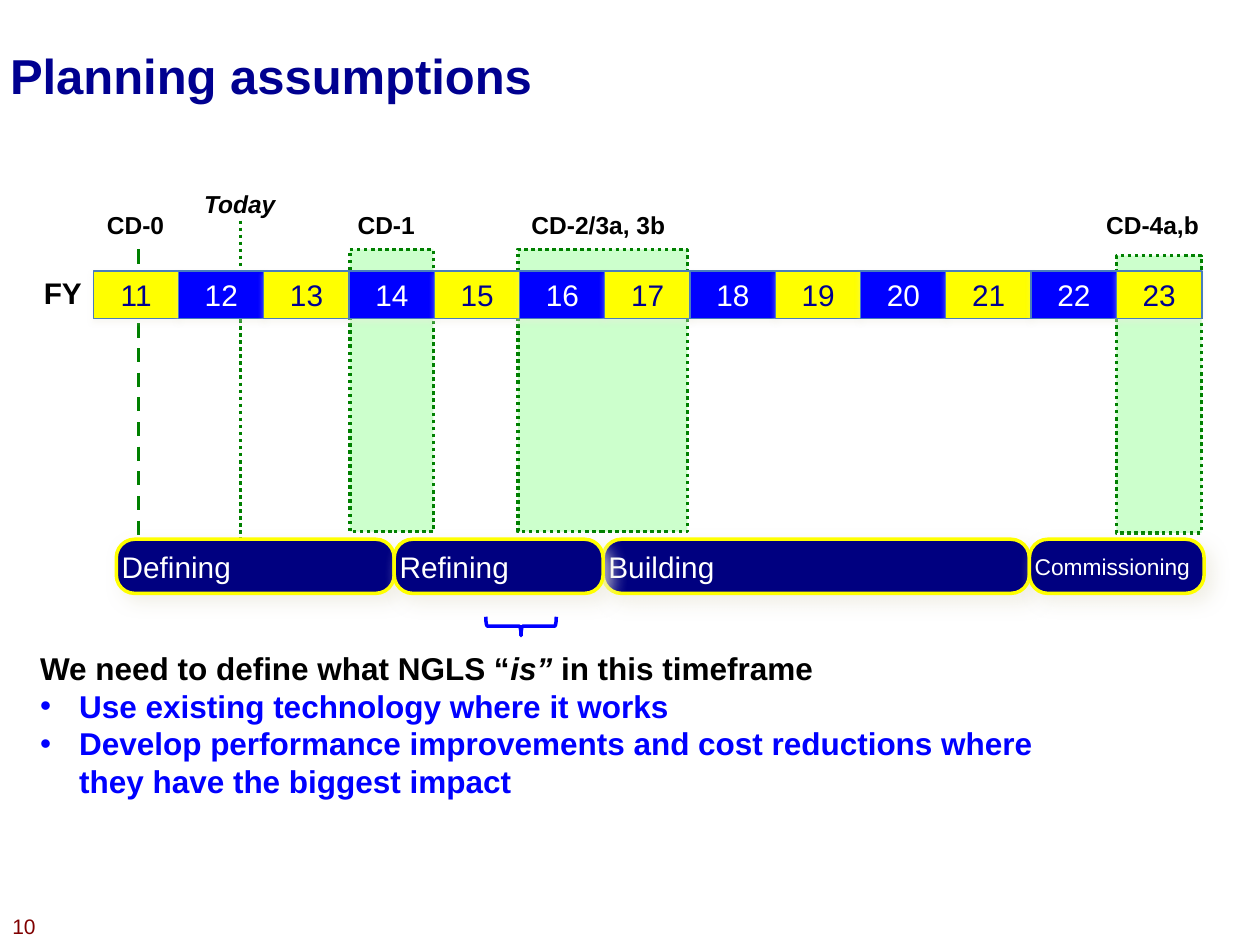
import pptx
import pptx.dml.color
import pptx.enum.dml
import pptx.enum.shapes
import pptx.enum.text
import pptx.oxml.ns
import pptx.util
from dataclasses import dataclass
from lxml import etree
from typing import Optional

Inches = pptx.util.Inches
Shape = pptx.enum.shapes.MSO_SHAPE
Dash = pptx.enum.dml.MSO_LINE
Anchor = pptx.enum.text.MSO_ANCHOR
Align = pptx.enum.text.PP_ALIGN
qn = pptx.oxml.ns.qn


@dataclass(frozen=True)
class Theme:
    font: str = "Arial"
    title: str = "000090"
    black: str = "000000"
    white: str = "FFFFFF"
    yellow: str = "FFFF00"
    blue: str = "0000FF"
    navy: str = "000080"
    green: str = "008000"
    pale_green: str = "CCFFCC"
    cell_line: str = "4A7DBB"
    shadow: str = "EEECE1"
    page: str = "800000"
    title_size: int = 28
    body_size: int = 18
    cell_size: int = 17
    label_size: int = 14
    small_size: int = 13
    page_size: int = 12


THEME = Theme()


@dataclass(frozen=True)
class Grid:
    left: float = 0.74
    last: float = 8.86
    first_year: int = 11
    last_year: int = 23

    @property
    def column(self) -> float:
        return (self.last - self.left) / (self.last_year - self.first_year)

    def x(self, columns: float) -> float:
        return self.left + columns * self.column


@dataclass(frozen=True)
class Shadow:
    opacity: int
    blur: float
    distance: float
    angle: int


@dataclass(frozen=True)
class Band:
    start: float
    end: float
    top: float
    height: float


@dataclass(frozen=True)
class Marker:
    column: float
    top: float
    bottom: float
    dash: Dash


@dataclass(frozen=True)
class Label:
    text: str
    column: float
    top: float
    width: float
    size: int = THEME.label_size
    italic: bool = False


@dataclass(frozen=True)
class Phase:
    text: str
    start: float
    end: float
    size: int = THEME.cell_size


GRID = Grid()
CELL_SHADOW = Shadow(35, 3, 1.8, 90)
PHASE_SHADOW = Shadow(75, 10, 6, 45)
BANDS = [Band(12, 13, 2.03, 2.2), Band(4.98, 6.97, 1.98, 2.24), Band(3.01, 3.99, 1.98, 2.24)]
MARKERS = [Marker(0.53, 1.98, 4.55, Dash.DASH), Marker(1.73, 1.75, 4.45, Dash.ROUND_DOT)]
LABELS = [
    Label("CD-0", 0.16, 1.67, 0.48),
    Label("Today", 1.3, 1.5, 0.6, italic=True),
    Label("CD-1", 3.1, 1.67, 0.48),
    Label("CD-2/3a, 3b", 5.14, 1.67, 1.11),
    Label("CD-4a,b", 11.88, 1.67, 0.77),
    Label("FY", -0.58, 2.18, 0.31, THEME.cell_size),
]
PHASES = [
    Phase("Defining", 0.27, 3.53),
    Phase("Building", 5.98, 10.98),
    Phase("Commissioning", 10.98, 13.03, THEME.small_size),
    Phase("Refining", 3.53, 5.98),
]


def rgb(color: str):
    return pptx.dml.color.RGBColor.from_string(color)


def format_run(run, size: int, color: str, bold: bool = False, italic: bool = False) -> None:
    font = run.font
    font.name, font.size = THEME.font, pptx.util.Pt(size)
    font.bold, font.italic = bold, italic
    font.color.rgb = rgb(color)


def set_margins(frame, horizontal: float, vertical: float) -> None:
    frame.margin_left = frame.margin_right = Inches(horizontal)
    frame.margin_top = frame.margin_bottom = Inches(vertical)


def set_line(line, color: str, width: float, dash: Optional[Dash] = None) -> None:
    line.color.rgb = rgb(color)
    line.width = pptx.util.Pt(width)
    if dash is not None:
        line.dash_style = dash


def add_shape(slide, kind, left: float, top: float, width: float, height: float,
              fill: Optional[str], line: str, line_width: float = 2,
              dash: Optional[Dash] = None, shadow: Optional[Shadow] = None):
    shape = slide.shapes.add_shape(kind, Inches(left), Inches(top), Inches(width), Inches(height))
    if fill:
        shape.fill.solid()
        shape.fill.fore_color.rgb = rgb(fill)
    else:
        shape.fill.background()
    set_line(shape.line, line, line_width, dash)
    shape.shadow.inherit = False
    if shadow:
        effects = shape._element.spPr.find(qn("a:effectLst"))
        outer = etree.SubElement(effects, qn("a:outerShdw"), blurRad=str(int(shadow.blur * 12700)),
                                 dist=str(int(shadow.distance * 12700)),
                                 dir=str(shadow.angle * 60000), rotWithShape="0")
        color = etree.SubElement(outer, qn("a:srgbClr"), val=THEME.shadow)
        etree.SubElement(color, qn("a:alpha"), val=str(shadow.opacity * 1000))
    return shape


def fill_text(shape, text: str, size: int, color: str, align) -> None:
    frame = shape.text_frame
    set_margins(frame, 0, 0)
    frame.vertical_anchor = Anchor.MIDDLE
    frame.text = text
    frame.paragraphs[0].alignment = align
    format_run(frame.paragraphs[0].runs[0], size, color)


def add_marker(slide, marker: Marker) -> None:
    x = Inches(GRID.x(marker.column))
    connector = slide.shapes.add_connector(pptx.enum.shapes.MSO_CONNECTOR.STRAIGHT, x,
                                           Inches(marker.top), x, Inches(marker.bottom))
    set_line(connector.line, THEME.green, 2, marker.dash)
    etree.SubElement(connector._element.spPr, qn("a:effectLst"))


def add_text(slide, left: float, top: float, width: float, height: float, wrap: bool = False):
    frame = slide.shapes.add_textbox(Inches(left), Inches(top), Inches(width), Inches(height)).text_frame
    frame.word_wrap = wrap
    return frame


def add_label(slide, label: Label) -> None:
    frame = add_text(slide, GRID.x(label.column), label.top, label.width, 0.24)
    set_margins(frame, 0, 0)
    frame.text = label.text
    format_run(frame.paragraphs[0].runs[0], label.size, THEME.black, True, label.italic)


def add_year(slide, index: int) -> None:
    fill, color = [(THEME.yellow, THEME.title), (THEME.blue, THEME.white)][index % 2]
    cell = add_shape(slide, Shape.RECTANGLE, GRID.x(index), 2.15, 0.68, 0.38, fill,
                     THEME.cell_line, 0.75, shadow=CELL_SHADOW)
    fill_text(cell, str(GRID.first_year + index), THEME.cell_size, color, Align.CENTER)


def add_phase(slide, phase: Phase) -> None:
    left = GRID.x(phase.start)
    shape = add_shape(slide, Shape.ROUNDED_RECTANGLE, left, 4.28, GRID.x(phase.end) - left, 0.43,
                      THEME.navy, THEME.yellow, shadow=PHASE_SHADOW)
    shape.adjustments[0] = 0.34
    fill_text(shape, phase.text, phase.size, THEME.white, Align.LEFT)


def add_statement(slide) -> None:
    frame = add_text(slide, 0.22, 5.1, 8.13, 1.31, wrap=True)
    for text in ("We need to define what NGLS “", "is”", " in this timeframe"):
        run = frame.paragraphs[0].add_run()
        run.text = text
        format_run(run, THEME.body_size, THEME.black, True, text == "is”")
    for text in ("Use existing technology where it works",
                 "Develop performance improvements and cost reductions where they have the biggest impact"):
        paragraph = frame.add_paragraph()
        properties = paragraph._p.get_or_add_pPr()
        properties.set("marL", str(Inches(0.31)))
        properties.set("indent", str(-Inches(0.31)))
        etree.SubElement(properties, qn("a:buFont"), typeface=THEME.font)
        etree.SubElement(properties, qn("a:buChar"), char="•")
        paragraph.text = text
        format_run(paragraph.runs[0], THEME.body_size, THEME.blue, True)


def add_title(slide, text: str) -> None:
    title = slide.shapes.title
    title.left, title.top, title.width, title.height = map(Inches, (0.01, 0.32, 8.36, 0.8))
    frame = title.text_frame
    set_margins(frame, 0.07, 0.04)
    frame.vertical_anchor = Anchor.TOP
    frame.text = text
    frame.paragraphs[0].alignment = Align.LEFT
    format_run(frame.paragraphs[0].runs[0], THEME.title_size, THEME.title, True)


def add_page_number(slide, text: str) -> None:
    frame = add_text(slide, 0, 7.2, 0.5, 0.3)
    set_margins(frame, 0.1, 0.05)
    frame.text = text
    frame.paragraphs[0].alignment = Align.LEFT
    format_run(frame.paragraphs[0].runs[0], THEME.page_size, THEME.page)


def main() -> None:
    presentation = pptx.Presentation()
    presentation.slide_width, presentation.slide_height = Inches(10), Inches(7.5)
    slide = presentation.slides.add_slide(presentation.slide_layouts[5])
    add_title(slide, "Planning assumptions")
    for band in BANDS:
        left = GRID.x(band.start)
        add_shape(slide, Shape.RECTANGLE, left, band.top, GRID.x(band.end) - left, band.height,
                  THEME.pale_green, THEME.green, dash=Dash.ROUND_DOT)
    for marker in MARKERS:
        add_marker(slide, marker)
    for index in range(GRID.last_year - GRID.first_year + 1):
        add_year(slide, index)
    for label in LABELS:
        add_label(slide, label)
    for phase in PHASES:
        add_phase(slide, phase)
    add_statement(slide)
    brace = add_shape(slide, Shape.RIGHT_BRACE, 4.06, 4.69, 0.15, 0.56, None, THEME.blue)
    brace.rotation = 90
    add_page_number(slide, "10")
    presentation.save("out.pptx")


if __name__ == "__main__":
    main()
